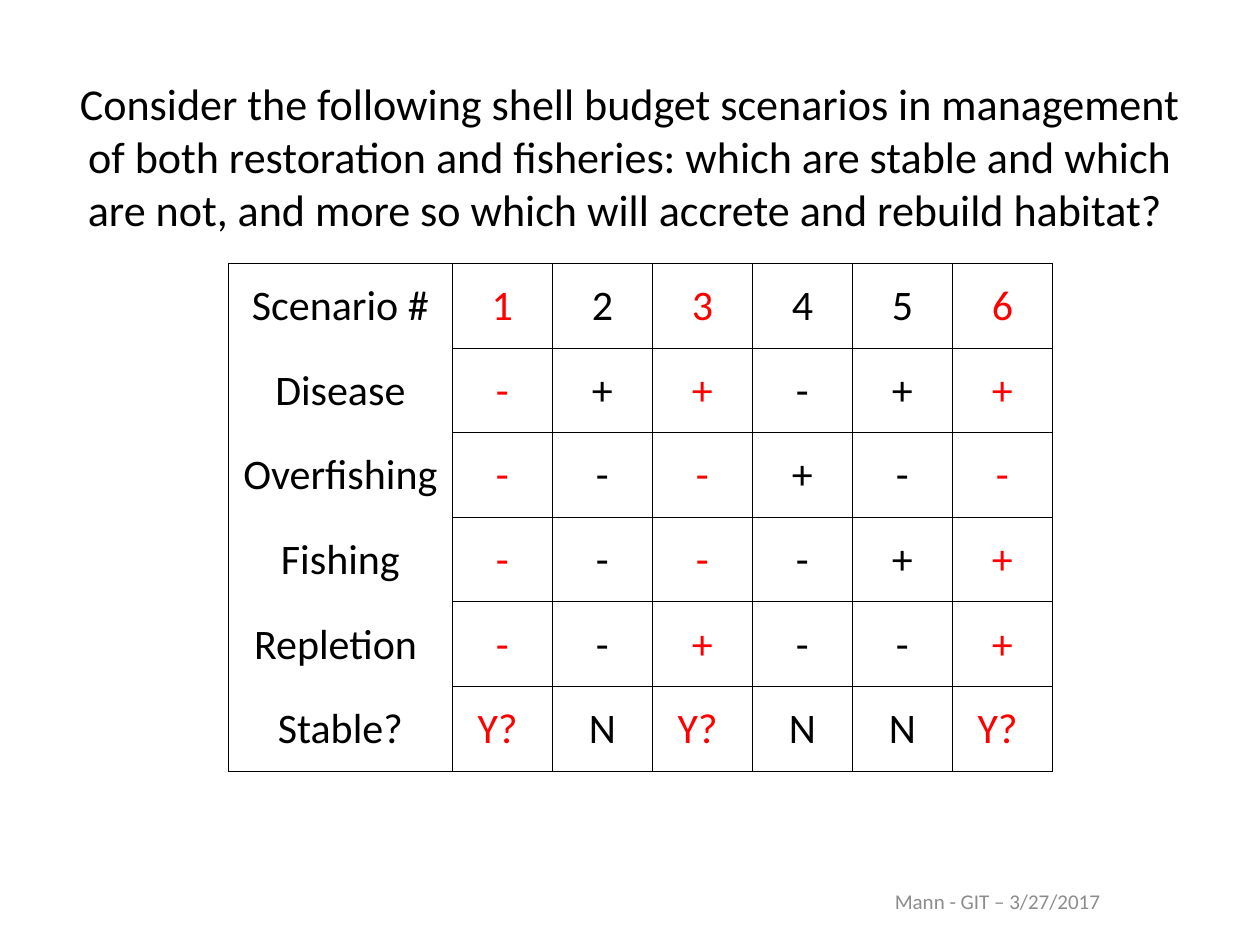
from dataclasses import dataclass
from lxml.etree import SubElement
from pptx import Presentation
from pptx.dml.color import RGBColor
from pptx.enum.text import MSO_ANCHOR, MSO_AUTO_SIZE, PP_ALIGN
from pptx.oxml.ns import qn
from pptx.util import Pt

COLORS = {"ink": "000000", "mark": "FF0000", "foot": "8C8C8C"}
HEAD_W, COL_W, ROW_H = 128, 57.15, 48.36
MARKED = (1, 3, 6)


@dataclass
class Row:
    label: str
    marks: list[str]


ROWS = [
    Row("Scenario #", ["1", "2", "3", "4", "5", "6"]),
    Row("Disease", ["-", "+", "+", "-", "+", "+"]),
    Row("Overfishing", ["-", "-", "-", "+", "-", "-"]),
    Row("Fishing", ["-", "-", "-", "-", "+", "+"]),
    Row("Repletion ", ["-", "-", "+", "-", "-", "+"]),
    Row("Stable?", ["Y? ", "N", "Y? ", "N", "N", "Y? "]),
]


def write(frame, text: str, size: float = 24, color: str = "ink") -> None:
    frame.word_wrap = True
    para = frame.paragraphs[0]
    para.alignment = PP_ALIGN.CENTER
    run = para.add_run()
    run.text = text
    font = run.font
    font.name, font.size, font.bold = "Calibri", Pt(size), False
    font.color.rgb = RGBColor.from_string(COLORS[color])


def place(shape, left: float, top: float, width: float, height: float) -> None:
    shape.left, shape.top = Pt(left), Pt(top)
    shape.width, shape.height = Pt(width), Pt(height)


def border(cell, sides: str) -> None:
    props = cell._tc.get_or_add_tcPr()
    for side in "LRTB":
        line = SubElement(props, qn(f"a:ln{side}"), w=str(Pt(0.5)))
        if side in sides:
            fill = SubElement(line, qn("a:solidFill"))
            SubElement(fill, qn("a:srgbClr"), val=COLORS["ink"])
        else:
            SubElement(line, qn("a:noFill"))


def draw_cell(cell, text: str, color: str, sides: str) -> None:
    border(cell, sides)
    cell.fill.background()
    cell.vertical_anchor = MSO_ANCHOR.MIDDLE
    cell.margin_left = cell.margin_right = cell.margin_top = Pt(0.72)
    cell.margin_bottom = 0
    write(cell.text_frame, text, color=color)


def draw_grid(slide, rows: list[Row]) -> None:
    count = len(rows[0].marks)
    table = slide.shapes.add_table(
        len(rows), count + 1, Pt(130.5), Pt(150.5),
        Pt(HEAD_W + count * COL_W), Pt(len(rows) * ROW_H)).table
    table.first_row = table.horz_banding = False
    for num, col in enumerate(table.columns):
        col.width = Pt(COL_W if num else HEAD_W)
    last = len(rows) - 1
    for num, row in enumerate(rows):
        table.rows[num].height = Pt(ROW_H)
        sides = "LR" + ("T" if num == 0 else "") + ("B" if num == last else "")
        draw_cell(table.cell(num, 0), row.label, "ink", sides)
        for col, text in enumerate(row.marks, 1):
            color = "mark" if col in MARKED else "ink"
            draw_cell(table.cell(num, col), text, color, "LRTB")


def main() -> None:
    deck = Presentation()
    deck.slide_width, deck.slide_height = Pt(720), Pt(540)
    slide = deck.slides.add_slide(deck.slide_layouts[5])
    title = slide.shapes.title
    place(title, 36, 44, 648, 90)
    title.text_frame.auto_size = MSO_AUTO_SIZE.NONE
    title.text_frame.vertical_anchor = MSO_ANCHOR.MIDDLE
    write(title.text_frame,
          "Consider the following shell budget scenarios in management of both "
          "restoration and fisheries: which are stable and which are not, and "
          "more so which will accrete and rebuild habitat? ", size=25.2)
    draw_grid(slide, ROWS)
    foot = slide.shapes.add_textbox(Pt(456), Pt(500.5), Pt(228), Pt(28.75))
    foot.text_frame.vertical_anchor = MSO_ANCHOR.MIDDLE
    write(foot.text_frame, "Mann - GIT – 3/27/2017", size=12, color="foot")
    deck.save("out.pptx")


if __name__ == "__main__":
    main()
